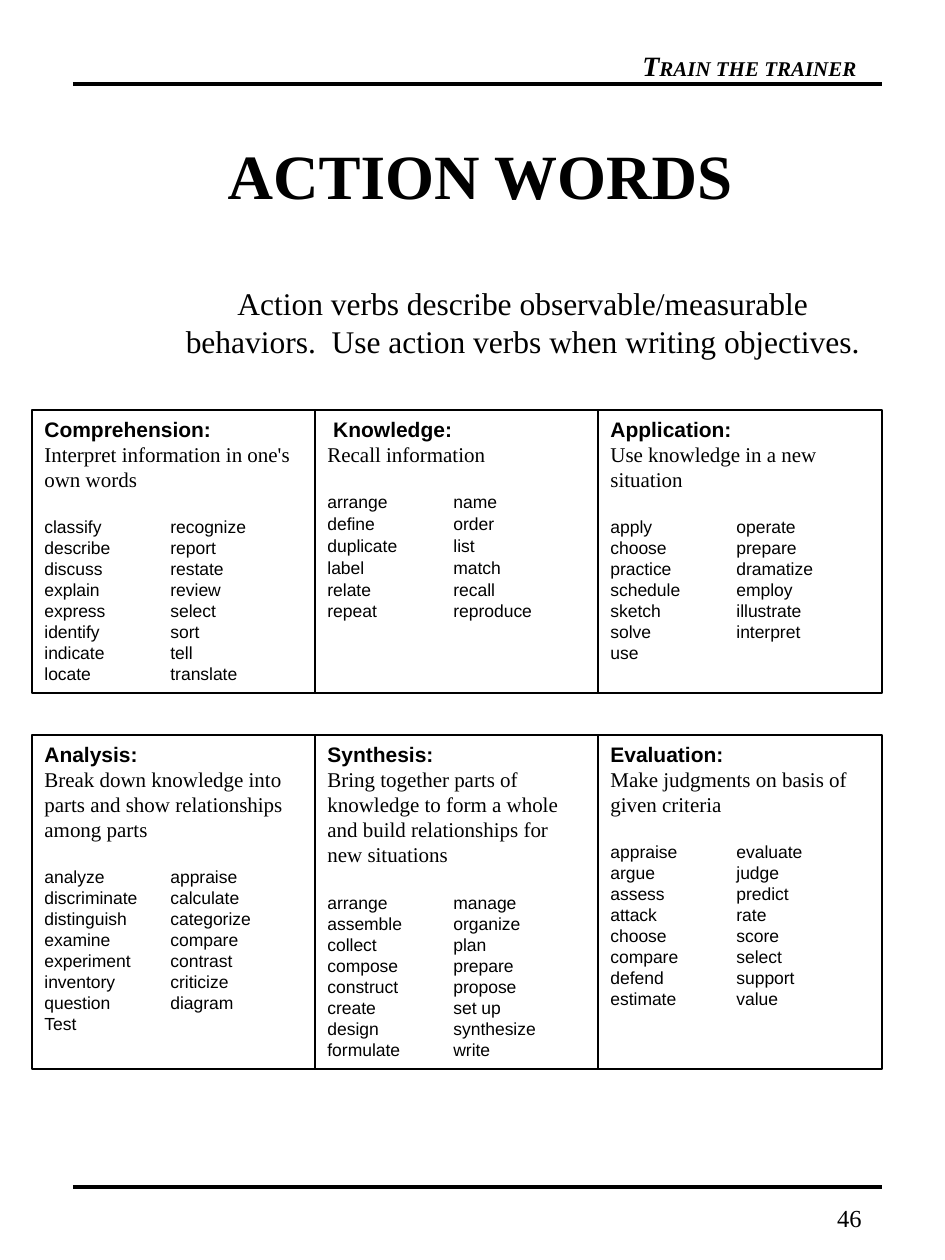
"""Build the Action Words handout page."""
from lxml import etree
from pptx import Presentation
from pptx.dml.color import RGBColor
from pptx.enum.shapes import MSO_CONNECTOR, MSO_SHAPE
from pptx.enum.text import MSO_ANCHOR, PP_ALIGN
from pptx.oxml.ns import qn
from pptx.util import Emu, Pt

LEFT, CENTER, RIGHT = PP_ALIGN.LEFT, PP_ALIGN.CENTER, PP_ALIGN.RIGHT
TOP, MIDDLE = MSO_ANCHOR.TOP, MSO_ANCHOR.MIDDLE
RECTANGLE, STRAIGHT = MSO_SHAPE.RECTANGLE, MSO_CONNECTOR.STRAIGHT

SCALE = 914400 // 126
COLORS = {"ink": "000000", "paper": "FFFFFF"}
SERIF, SANS = "Times New Roman", "Arial"

INTRO = ("Action verbs describe observable/measurable behaviors.  "
         "Use action verbs when writing objectives.")
CARDS = [
    ("Comprehension:", "Interpret information in one's own words",
     ["classify\trecognize", "describe\treport", "discuss\trestate", "explain\treview",
      "express\tselect", "identify\tsort", "indicate\ttell", "locate\ttranslate"], 0),
    ("\u00a0Knowledge:", "Recall information",
     ["arrange\tname", "define\torder", "duplicate\tlist", "label\tmatch",
      "relate\trecall", "repeat\treproduce"], 0.5),
    ("Application:", "Use knowledge in a new situation",
     ["apply\toperate", "choose\tprepare", "practice\tdramatize", "schedule\temploy",
      "sketch\tillustrate", "solve\tinterpret", "use"], 0),
    ("Analysis:", "Break down knowledge into parts and show relationships among parts",
     ["analyze\tappraise", "discriminate\tcalculate", "distinguish\tcategorize",
      "examine\tcompare", "experiment\tcontrast", "inventory\tcriticize",
      "question\tdiagram", "Test"], 0),
    ("Synthesis:", "Bring together parts of knowledge to form a whole and build "
     "relationships for new situations",
     ["arrange\tmanage", "assemble\torganize", "collect\tplan", "compose\tprepare",
      "construct\tpropose", "create\tset up", "design\tsynthesize", "formulate\twrite"], 0),
    ("Evaluation:", "Make judgments on basis of given criteria",
     ["appraise\tevaluate", "argue\tjudge", "assess\tpredict", "attack\trate",
      "choose\tscore", "compare\tselect", "defend\tsupport", "estimate\tvalue"], 0),
]
CARD_LEFT, CARD_STEP, CARD_WIDTH, COLUMNS = 32, 283, 284, 3
ROWS = [(410, 283), (735, 334)]
WORD_GAP, WORD_TAB = 14, 126
RULES = [84, 1187]


def px(*values):
    return [Emu(value * SCALE) for value in values]


def color(name):
    return RGBColor.from_string(COLORS[name])


def style(span, size, face=SERIF, bold=False, italic=False):
    font = span.font
    font.size, font.name, font.bold, font.italic = Pt(size), face, bold, italic
    font.color.rgb = color("ink")


def write(para, text, size, face=SERIF, bold=False, align=LEFT, before=0):
    para.text = text
    para.alignment = align
    para.line_spacing = Pt(round(size * 1.2, 1))
    para.space_before = Pt(before)
    style(para.runs[0], size, face, bold)


def set_tab(para, position):
    tabs = etree.SubElement(para._p.get_or_add_pPr(), qn("a:tabLst"))
    etree.SubElement(tabs, qn("a:tab"), pos=str(position * SCALE), algn="l")


def add_text(page, place, text, size, align, anchor=TOP, bold=False):
    frame = page.shapes.add_textbox(*px(*place)).text_frame
    frame.word_wrap = True
    frame.vertical_anchor = anchor
    write(frame.paragraphs[0], text, size, bold=bold, align=align)


def add_header(page):
    frame = page.shapes.add_textbox(*px(630, 42, 252, 47)).text_frame
    frame.word_wrap = True
    for text, size in [("T", 16), ("RAIN THE TRAINER", 12)]:
        span = frame.paragraphs[0].add_run()
        span.text = text
        style(span, size, bold=True, italic=True)


def add_rule(page, y):
    rule = page.shapes.add_connector(STRAIGHT, *px(73, y, 882, y))
    rule.line.color.rgb = color("ink")
    rule.line.width = Pt(2.25)
    etree.SubElement(rule._element.spPr, qn("a:effectLst"))


def add_card(page, index, card):
    heading, meaning, words, spacing = card
    row, column = divmod(index, COLUMNS)
    top, height = ROWS[row]
    box = page.shapes.add_shape(
        RECTANGLE, *px(CARD_LEFT + column * CARD_STEP, top, CARD_WIDTH, height))
    box.shadow.inherit = False
    box.fill.solid()
    box.fill.fore_color.rgb = color("paper")
    box.line.color.rgb = color("ink")
    box.line.width = Pt(1)
    frame = box.text_frame
    frame.word_wrap = True
    frame.vertical_anchor = TOP
    write(frame.paragraphs[0], heading, 12, SANS, bold=True)
    write(frame.add_paragraph(), meaning, 12)
    for number, pair in enumerate(words):
        para = frame.add_paragraph()
        write(para, pair, 10, SANS, before=spacing if number else WORD_GAP)
        set_tab(para, WORD_TAB)


def main():
    deck = Presentation()
    deck.slide_width, deck.slide_height = px(945, 1260)
    page = deck.slides.add_slide(deck.slide_layouts[6])
    for y in RULES:
        add_rule(page, y)
    add_header(page)
    add_text(page, (678, 1197, 196, 35), "46", 14, RIGHT)
    add_text(page, (166, 278, 714, 91), INTRO, 18, CENTER)
    for index, card in enumerate(CARDS):
        add_card(page, index, card)
    add_text(page, (78, 109, 804, 130), "ACTION WORDS", 36, CENTER, MIDDLE, bold=True)
    deck.save("out.pptx")


if __name__ == "__main__":
    main()
